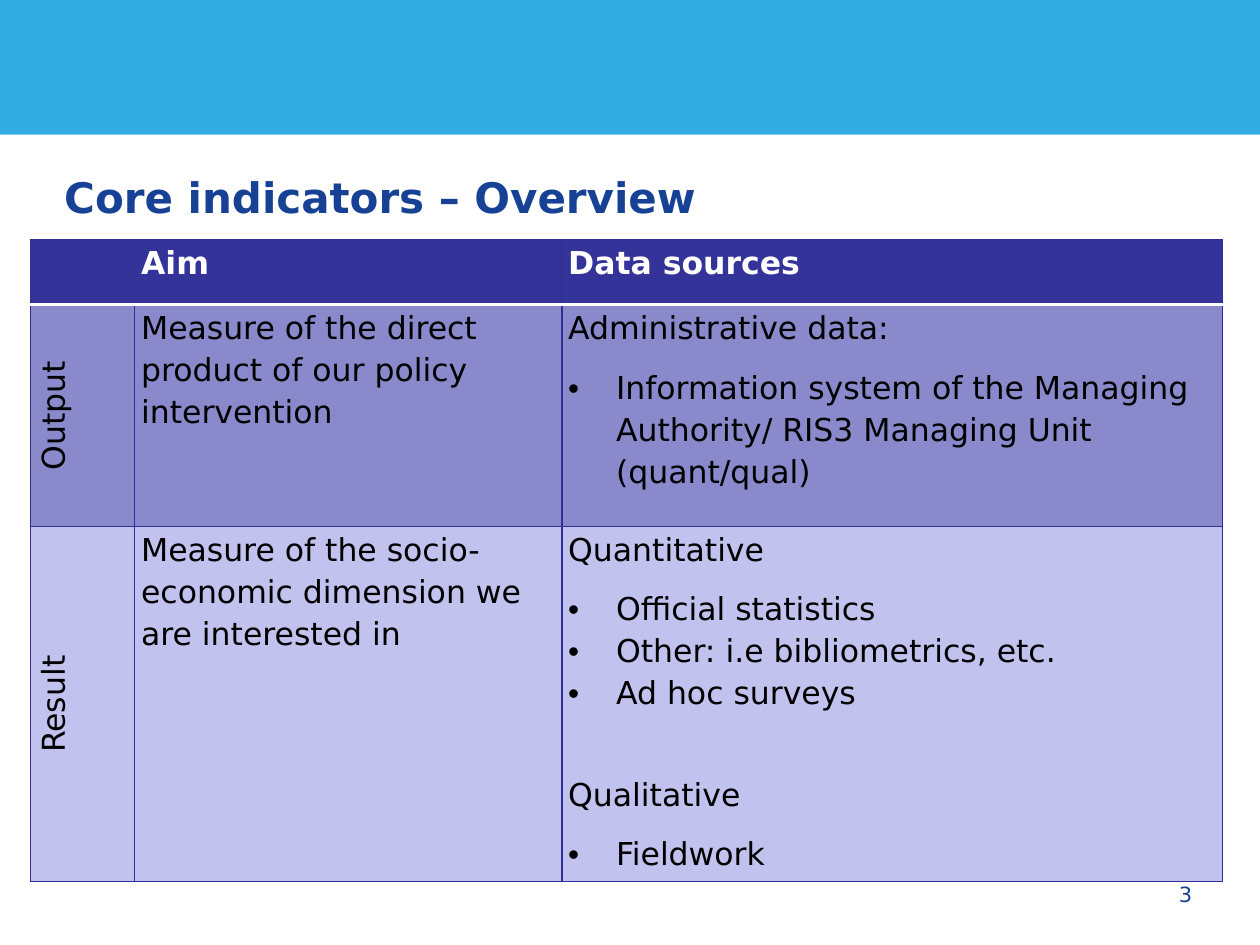
from lxml.etree import SubElement
from pptx import Presentation
from pptx.dml.color import RGBColor
from pptx.enum.shapes import MSO_SHAPE
from pptx.enum.text import MSO_ANCHOR, PP_ALIGN
from pptx.oxml import parse_xml
from pptx.oxml.ns import nsdecls, qn
from pptx.util import Inches, Pt

FONT = "DejaVu Sans"
SKY = RGBColor(0x33, 0xAC, 0xE3)
BLUE = RGBColor(0x16, 0x41, 0x94)
INDIGO = RGBColor(0x33, 0x33, 0x99)
BORDER = RGBColor(0x2F, 0x2F, 0x98)
MEDIUM = RGBColor(0x89, 0x89, 0xCC)
LIGHT = RGBColor(0xC2, 0xC2, 0xEE)
WHITE = RGBColor(0xFF, 0xFF, 0xFF)
BLACK = RGBColor(0x00, 0x00, 0x00)

TITLE = "Core indicators – Overview"
PAGE_NUMBER = "3"
BULLET = "•"
SECTION_GAP = Pt(34)

# Each cell is a list of paragraphs; a leading bullet marks a list item.
ROWS = [
    [[], ["Aim"], ["Data sources"]],
    [
        ["Output"],
        ["Measure of the direct product of our policy intervention"],
        [
            "Administrative data:",
            "• Information system of the Managing Authority/ RIS3 Managing Unit (quant/qual)",
        ],
    ],
    [
        ["Result"],
        ["Measure of the socio-economic dimension we are interested in"],
        [
            "Quantitative",
            "• Official statistics",
            "• Other: i.e bibliometrics, etc.",
            "• Ad hoc surveys",
            "Qualitative",
            "• Fieldwork",
        ],
    ],
]
ROW_FILLS = [INDIGO, MEDIUM, LIGHT]
ROW_HEIGHTS = [0.52, 1.76, 2.76]
COLUMN_WIDTHS = [0.83, 3.39, 5.24]


def style_font(para, size, color, bold=False):
    for span in para.runs:
        span.font.name = FONT
        span.font.size = Pt(size)
        span.font.bold = bold
        span.font.color.rgb = color


def add_text(page, text, place, margin_x, anchor, align, size, bold=False):
    box = page.shapes.add_textbox(*(Inches(value) for value in place))
    frame = box.text_frame
    frame.word_wrap = True
    frame.vertical_anchor = anchor
    frame.margin_left = frame.margin_right = Inches(margin_x)
    frame.margin_top = frame.margin_bottom = 0
    frame.text = text
    para = frame.paragraphs[0]
    para.alignment = align
    style_font(para, size, BLUE, bold)
    return para


def set_borders(cell, is_header, is_below_header):
    properties = cell._tc.get_or_add_tcPr()
    for position, side in enumerate(("lnL", "lnR", "lnT", "lnB")):
        rule = (is_header and side == "lnB") or (is_below_header and side == "lnT")
        color, width = (WHITE, Pt(2)) if rule else (BORDER, Pt(0.75))
        properties.insert(position, parse_xml(
            f'<a:{side} {nsdecls("a")} w="{int(width)}"><a:solidFill>'
            f'<a:srgbClr val="{color}"/></a:solidFill></a:{side}>'))


def add_bullet(para):
    properties = para._p.get_or_add_pPr()
    properties.set("marL", str(Inches(0.38)))
    properties.set("indent", str(-Inches(0.38)))
    SubElement(properties, qn("a:buFont")).set("typeface", "Arial")
    SubElement(properties, qn("a:buChar")).set("char", BULLET)


def fill_cell(cell, lines, color, bold):
    cell.margin_left = cell.margin_right = Inches(0.05)
    cell.margin_top = cell.margin_bottom = 0
    frame = cell.text_frame
    frame.text = "\n".join(line.removeprefix(BULLET).strip() for line in lines)
    for index, (line, para) in enumerate(zip(lines, frame.paragraphs)):
        is_item = line.startswith(BULLET)
        next_is_item = is_item and index + 1 < len(lines)
        para.line_spacing = 1.15
        para.space_after = Pt(0 if next_is_item else 10)
        if is_item:
            add_bullet(para)
        elif index:
            para.space_before = SECTION_GAP
        style_font(para, 18, color, bold)


def add_indicator_table(page):
    frame = page.shapes.add_table(
        len(ROWS), len(COLUMN_WIDTHS), Inches(0.24), Inches(1.9),
        Inches(sum(COLUMN_WIDTHS)), Inches(sum(ROW_HEIGHTS)))
    table = frame.table
    for column, width in zip(table.columns, COLUMN_WIDTHS):
        column.width = Inches(width)
    for row_index, (row, height) in enumerate(zip(ROWS, ROW_HEIGHTS)):
        table.rows[row_index].height = Inches(height)
        is_header = row_index == 0
        for column_index, lines in enumerate(row):
            cell = table.cell(row_index, column_index)
            cell.fill.solid()
            cell.fill.fore_color.rgb = ROW_FILLS[row_index]
            set_borders(cell, is_header, row_index == 1)
            fill_cell(cell, lines, WHITE if is_header else BLACK, is_header)
            if column_index == 0 and not is_header:
                cell._tc.get_or_add_tcPr().set("vert", "vert270")
                cell.text_frame.paragraphs[0].alignment = PP_ALIGN.CENTER


def main():
    deck = Presentation()
    deck.slide_width, deck.slide_height = Inches(10), Inches(7.5)
    page = deck.slides.add_slide(deck.slide_layouts[6])

    banner = page.shapes.add_shape(
        MSO_SHAPE.RECTANGLE, 0, 0, deck.slide_width, Inches(1.07))
    banner.shadow.inherit = False
    banner.fill.solid()
    banner.fill.fore_color.rgb = SKY
    banner.line.fill.background()

    add_text(page, PAGE_NUMBER, (7.23, 6.9, 2.33, 0.4), 0.1,
             MSO_ANCHOR.MIDDLE, PP_ALIGN.RIGHT, 12)
    title = add_text(page, TITLE, (0.51, 1.32, 8.98, 0.71), 0,
                     MSO_ANCHOR.TOP, PP_ALIGN.JUSTIFY, 24, bold=True)
    title.line_spacing = 1.1
    add_indicator_table(page)
    deck.save("out.pptx")


if __name__ == "__main__":
    main()
